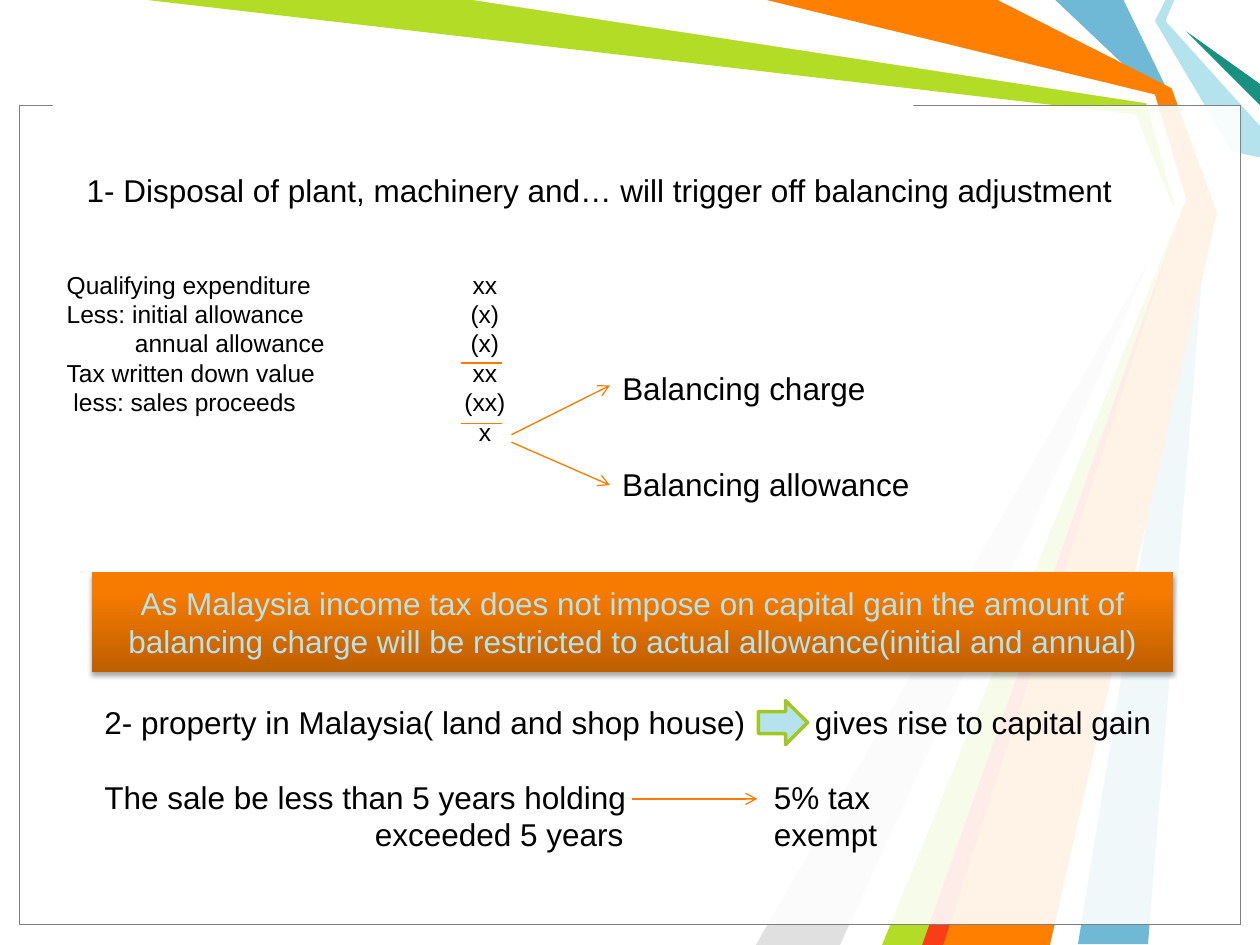
"""Build the slide on balancing adjustments and capital gain."""
from lxml.etree import SubElement
from pptx import Presentation
from pptx.dml.color import RGBColor
from pptx.enum.shapes import MSO_CONNECTOR as LINK, MSO_SHAPE as SHAPE
from pptx.enum.text import MSO_ANCHOR as ANCHOR, PP_ALIGN as ALIGN
from pptx.oxml.ns import qn
from pptx.util import Pt

COLORS = {
    "blue": "6FB9D7", "lime": "B3DC27", "grey": "E0E0E0", "white": "FFFFFF",
    "ice": "B4E3EE", "green": "189180", "orange": "FF7F00", "red": "F93D17",
    "black": "000000", "edge": "808080", "link": "F97C00", "rim": "A2C722",
    "dark": "BE5F00", "mid": "F77B00", "light": "F87C00",
}
RAYS = [
    ("blue", [(642, 0), (669, 55.5), (690, 120), (656, 539.5),
              (616, 539.5), (684, 120), (660, 54), (603, 0)]),
    ("lime", [(84, 0), (276, 0), (658, 56), (678, 122),
              (534, 540), (498, 540), (673, 124.5), (649, 65.5)]),
    ("grey", [(480, 540), (667.5, 130), (432, 540)]),
    ("white", [(270, 0), (655, 59), (671, 116.5), (486, 540),
               (504, 540), (677.5, 114), (660, 54), (432, 0)]),
    ("ice", [(666, 0), (660, 12), (704, 86.5), (720, 90),
             (720, 72), (666, 12), (671, 0)]),
    ("green", [(720, 60), (678, 18), (720, 48)]),
    ("orange", [(438, 0), (570, 0), (669.5, 50.5), (695.5, 121.5),
                (600, 540), (528, 540), (678, 114), (660, 54)]),
    ("red", [(527, 540), (671, 132), (539, 540)]),
]
SUM = 239
COSTS = [
    ("Qualifying expenditure\txx", [(SUM, "ctr")], 0),
    ("Less: initial allowance\t(x)", [(SUM, "ctr")], 0),
    ("\tannual allowance\t(x)", [(39, "l"), (SUM, "ctr")], 0),
    ("Tax written down value\txx", [(SUM, "ctr")], 0),
    (" less: sales proceeds\t(xx)", [(SUM, "ctr")], 0),
    ("\tx", [(SUM, "ctr")], 0),
]
RATE = 382.5
GAINS = [
    ("2- property in Malaysia( land and shop house)\tgives rise to capital gain",
     [(406, "l")], 0),
    ("The sale be less than 5 years holding\t5% tax", [(RATE, "l")], 21),
    ("\texceeded 5 years\texempt", [(154.5, "l"), (RATE, "l")], 0),
]


def rgb(name):
    """Return a named colour."""
    return RGBColor.from_string(COLORS[name])


def paint(shape, fill, line=None, width=0.75):
    """Give a shape a flat fill and an optional outline, without shadow."""
    shape.shadow.inherit = False
    shape.fill.solid()
    shape.fill.fore_color.rgb = rgb(fill)
    if line:
        shape.line.color.rgb = rgb(line)
        shape.line.width = Pt(width)
    else:
        shape.line.fill.background()


def add_ray(slide, fill, points):
    """Draw one background ray through its corner points."""
    first, *rest = [(Pt(x), Pt(y)) for x, y in points]
    pen = slide.shapes.build_freeform(*first)
    pen.add_line_segments(rest, close=True)
    paint(pen.convert_to_shape(), fill)


def add_block(slide, kind, area, fill, line=None, width=0.75):
    """Add a preset shape and return it."""
    shape = slide.shapes.add_shape(kind, *map(Pt, area))
    paint(shape, fill, line, width)
    return shape


def add_frame(slide, line):
    """Add one veiled page frame."""
    frame = add_block(slide, SHAPE.RECTANGLE, (11.3, 60.3, 697.7, 468), "white", line)
    color = frame.fill._xPr.find(qn("a:solidFill"))[0]
    SubElement(color, qn("a:alpha"), val="69000")


def add_link(slide, start, end, arrow=False):
    """Draw a thin orange line, with an arrowhead if asked."""
    link = slide.shapes.add_connector(LINK.STRAIGHT, *map(Pt, start + end))
    link.line.color.rgb = rgb("link")
    link.line.width = Pt(0.75)
    if arrow:
        SubElement(link.line._get_or_add_ln(), qn("a:tailEnd"), type="arrow")
    SubElement(link._element.spPr, qn("a:effectLst"))


def add_run(para, text, size, color="black"):
    """Add one run of Arial text."""
    run = para.add_run()
    run.text = text
    run.font.name = "Arial"
    run.font.size = Pt(size)
    run.font.color.rgb = rgb(color)


def add_text(slide, area, rows, size=18):
    """Add a text box with rows of text, tab stops and space before."""
    frame = slide.shapes.add_textbox(*map(Pt, area)).text_frame
    frame.word_wrap = True
    for i, (text, stops, gap) in enumerate(rows):
        para = frame.add_paragraph() if i else frame.paragraphs[0]
        if stops:
            tabs = SubElement(para._p.get_or_add_pPr(), qn("a:tabLst"))
            for pos, side in stops:
                SubElement(tabs, qn("a:tab"), pos=str(Pt(pos)), algn=side)
        if gap:
            para.space_before = Pt(gap)
        add_run(para, text, size)


def add_banner(slide, text):
    """Add the shaded banner with its soft shadow and centred text."""
    shape = add_block(slide, SHAPE.RECTANGLE, (52.6, 326.9, 617.8, 56.9), "orange")
    shape.fill.gradient()
    shape.fill.gradient_angle = 90
    props = shape._element.spPr
    stops = props.find(qn("a:gradFill")).find(qn("a:gsLst"))
    for stop in list(stops):
        stops.remove(stop)
    for pos, name in [(0, "dark"), (80, "mid"), (100, "light")]:
        stop = SubElement(stops, qn("a:gs"), pos=str(pos * 1000))
        SubElement(stop, qn("a:srgbClr"), val=COLORS[name])
    shade = SubElement(props.find(qn("a:effectLst")), qn("a:outerShdw"),
                       blurRad=str(Pt(3.1)), dist=str(Pt(1.8)),
                       dir="5400000", rotWithShape="0")
    color = SubElement(shade, qn("a:srgbClr"), val=COLORS["black"])
    SubElement(color, qn("a:alpha"), val="35000")
    frame = shape.text_frame
    frame.word_wrap = True
    frame.vertical_anchor = ANCHOR.MIDDLE
    para = frame.paragraphs[0]
    para.alignment = ALIGN.CENTER
    add_run(para, text, 18, "ice")


def main():
    """Build and save the slide."""
    deck = Presentation()
    deck.slide_width, deck.slide_height = Pt(720), Pt(540)
    slide = deck.slides.add_slide(deck.slide_layouts[6])
    for fill, points in RAYS:
        add_ray(slide, fill, points)
    for line in ("black", "edge"):
        add_frame(slide, line)
    add_block(slide, SHAPE.RECTANGLE, (30.2, 53.3, 491.8, 12.2), "white")
    add_text(slide, (42.5, 94.3, 652.3, 51), [(
        "1- Disposal of plant, machinery and… will trigger off balancing adjustment",
        [], 0)])
    add_link(slide, (292.3, 252.7), (348.5, 277.2), True)
    add_link(slide, (292.3, 248.4), (348.5, 220.3), True)
    add_text(slide, (348.5, 207.4, 170, 29), [("Balancing charge", [], 0)])
    add_text(slide, (348.5, 262, 204.5, 29), [("Balancing allowance", [], 0)])
    add_banner(slide, "As Malaysia income tax does not impose on capital gain the "
               "amount of balancing charge will be restricted to actual "
               "allowance(initial and annual)")
    add_text(slide, (52.6, 398.2, 617.8, 116.6), GAINS)
    add_block(slide, SHAPE.RIGHT_ARROW, (433.4, 400.3, 28.1, 25.2), "ice", "rim", 2)
    add_link(slide, (361.4, 456.5), (432.7, 456.5), True)
    for y in (207.4, 241.9):
        add_link(slide, (263.5, y), (286.6, y))
    add_text(slide, (31, 150.5, 289.4, 126), COSTS, 14)
    deck.save("out.pptx")


if __name__ == "__main__":
    main()
